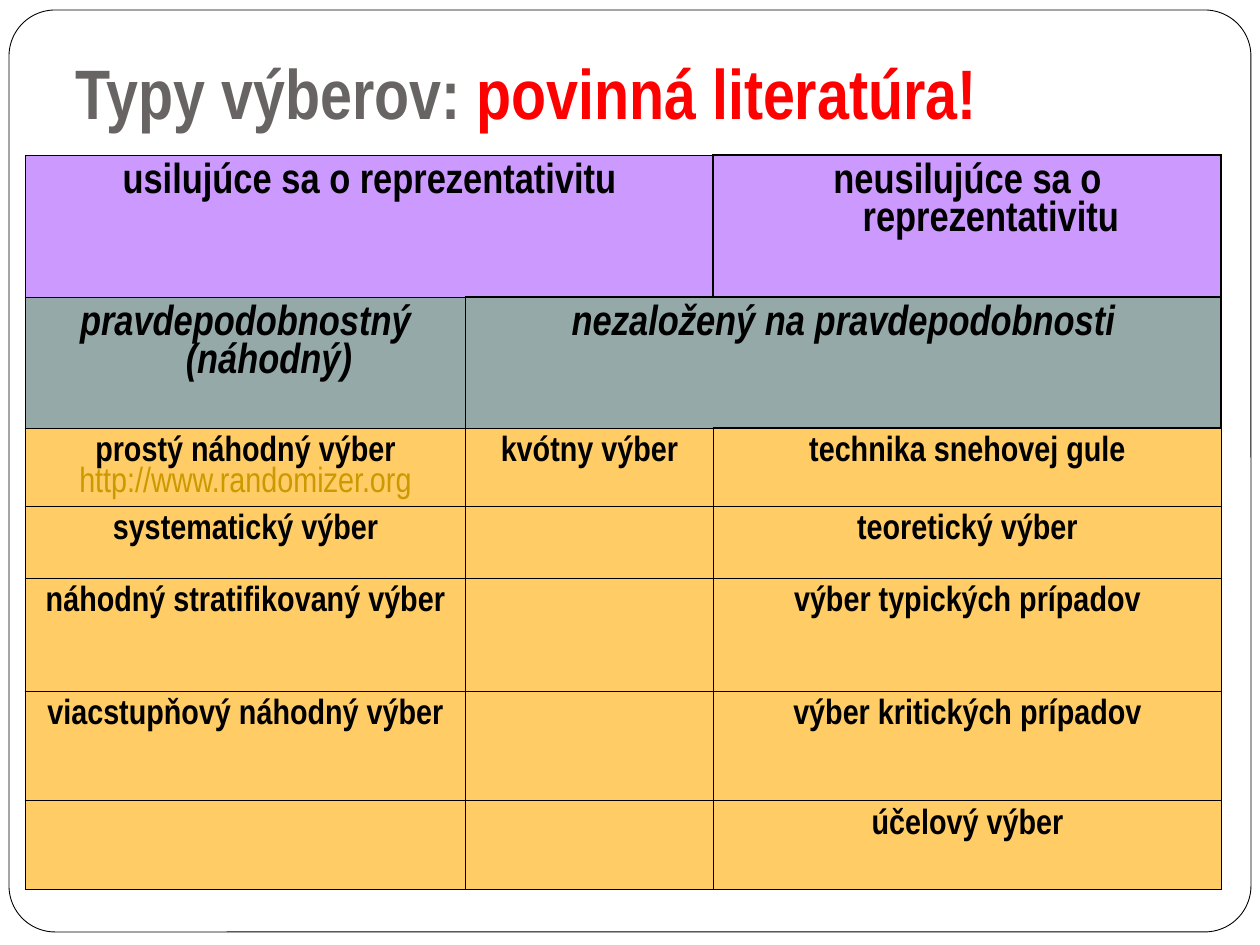
from dataclasses import dataclass

from lxml import etree
from pptx import Presentation
from pptx.dml.color import RGBColor
from pptx.enum.shapes import MSO_SHAPE
from pptx.enum.text import MSO_ANCHOR, MSO_AUTO_SIZE, PP_ALIGN
from pptx.oxml.ns import qn
from pptx.util import Emu, Pt

ROUND_RECT = MSO_SHAPE.ROUNDED_RECTANGLE
BOTTOM, TOP = MSO_ANCHOR.BOTTOM, MSO_ANCHOR.TOP
LEFT, CENTER = PP_ALIGN.LEFT, PP_ALIGN.CENTER
NO_FIT = MSO_AUTO_SIZE.NONE
TITLE_ONLY = 5


def px(n):
    return Emu(round(n * 914400 / 126))


@dataclass(frozen=True)
class Theme:
    font: str = "Arial Narrow"
    black: str = "000000"
    title: str = "696464"
    accent: str = "FF0000"
    link: str = "CC9900"
    goal: str = "CC99FF"
    method: str = "96A9A9"
    kind: str = "FFCC66"
    title_size: int = 40
    head_size: int = 24
    body_size: int = 20
    thin: float = 0.45
    heavy: float = 1


class SlideBuilder:
    def __init__(self, prs, theme):
        self.theme = theme
        self.s = prs.slides.add_slide(prs.slide_layouts[TITLE_ONLY])

    def run(self, p, text, size, color, bold=True, italic=False):
        r = p.add_run()
        r.text = text
        f = r.font
        f.name, f.size, f.bold, f.italic = self.theme.font, Pt(size), bold, italic
        f.color.rgb = RGBColor.from_string(color)

    def frame(self, x, y, w, h):
        sp = self.s.shapes.add_shape(ROUND_RECT, px(x), px(y), px(w), px(h))
        sp.adjustments[0] = 0.05
        sp.shadow.inherit = False
        sp.fill.background()
        sp.line.color.rgb = RGBColor.from_string(self.theme.black)
        sp.line.width = Pt(0.5)

    def title(self, x, y, w, h, parts):
        sp = self.s.shapes.title
        sp.left, sp.top, sp.width, sp.height = px(x), px(y), px(w), px(h)
        tf = sp.text_frame
        tf.word_wrap, tf.auto_size, tf.vertical_anchor = True, NO_FIT, BOTTOM
        tf.margin_left = tf.margin_right = tf.margin_bottom = px(13)
        tf.margin_top = px(6)
        p = tf.paragraphs[0]
        p.alignment = LEFT
        for text, color in parts:
            self.run(p, text, self.theme.title_size, color)

    def table(self, x, y, cols, rows):
        sp = self.s.shapes.add_table(len(rows), len(cols), px(x), px(y),
                                     px(sum(cols)), px(sum(rows)))
        table = sp.table
        table.first_row = table.horz_banding = False
        for col, w in zip(table.columns, cols):
            col.width = px(w)
        for row, h in zip(table.rows, rows):
            row.height = px(h)
        return table

    def cell(self, cell, lines, fill, size, italic, heavy):
        cell.margin_left = cell.margin_right = px(13)
        cell.margin_top, cell.margin_bottom = px(8), px(6)
        cell.vertical_anchor = TOP
        self.borders(cell, heavy)
        cell.fill.solid()
        cell.fill.fore_color.rgb = RGBColor.from_string(fill)
        tf = cell.text_frame
        for i, (text, color, bold) in enumerate(lines):
            p = tf.add_paragraph() if i else tf.paragraphs[0]
            p.alignment, p.line_spacing = CENTER, 0.96
            pPr = p._p.get_or_add_pPr()
            pPr.set("marL", str(px(48)))
            pPr.set("indent", str(px(-47)))
            self.run(p, text, size, color, bold, italic)

    def borders(self, cell, heavy):
        tcPr = cell._tc.get_or_add_tcPr()
        for side in "LRTB":
            width = self.theme.heavy if side in heavy else self.theme.thin
            ln = etree.SubElement(tcPr, qn("a:ln" + side), w=str(Pt(width)))
            fill = etree.SubElement(ln, qn("a:solidFill"))
            etree.SubElement(fill, qn("a:srgbClr"), val=self.theme.black)


def main():
    theme = Theme()
    prs = Presentation()
    prs.slide_width, prs.slide_height = px(1260), px(945)
    b = SlideBuilder(prs, theme)

    # Frame and title
    b.frame(9, 10, 1242, 932 - 10)
    b.title(63, 35, 1134, 111, [("Typy výberov: ", theme.title),
                                ("povinná literatúra!", theme.accent)])

    # Table grid with its merged headings
    table = b.table(25, 155, [440, 248, 508], [142, 131, 78, 72, 113, 110, 89])
    table.cell(0, 0).merge(table.cell(0, 1))
    table.cell(1, 1).merge(table.cell(1, 2))

    # Cell texts, row by row
    texts = [
        ["usilujúce sa o reprezentativitu", "", "neusilujúce sa o reprezentativitu"],
        ["pravdepodobnostný (náhodný)", "nezaložený na pravdepodobnosti", ""],
        ["prostý náhodný výber", "kvótny výber", "technika snehovej gule"],
        ["systematický výber", "", "teoretický výber"],
        ["náhodný stratifikovaný výber", "", "výber typických prípadov"],
        ["viacstupňový náhodný výber", "", "výber kritických prípadov"],
        ["", "", "účelový výber"],
    ]
    extra = {(2, 0): [("http://www.randomizer.org", theme.link, False)]}
    heavy = {(0, 0): "R", (0, 1): "R", (0, 2): "LRTB",
             (1, 1): "TR", (1, 2): "TR", (2, 2): "T"}
    fills = [theme.goal, theme.method] + [theme.kind] * 5
    for i, row in enumerate(texts):
        size = theme.head_size if i < 2 else theme.body_size
        for j, text in enumerate(row):
            lines = [(text, theme.black, True)] if text else []
            b.cell(table.cell(i, j), lines + extra.get((i, j), []), fills[i],
                   size, i == 1, heavy.get((i, j), ""))

    prs.save("out.pptx")


if __name__ == "__main__":
    main()
